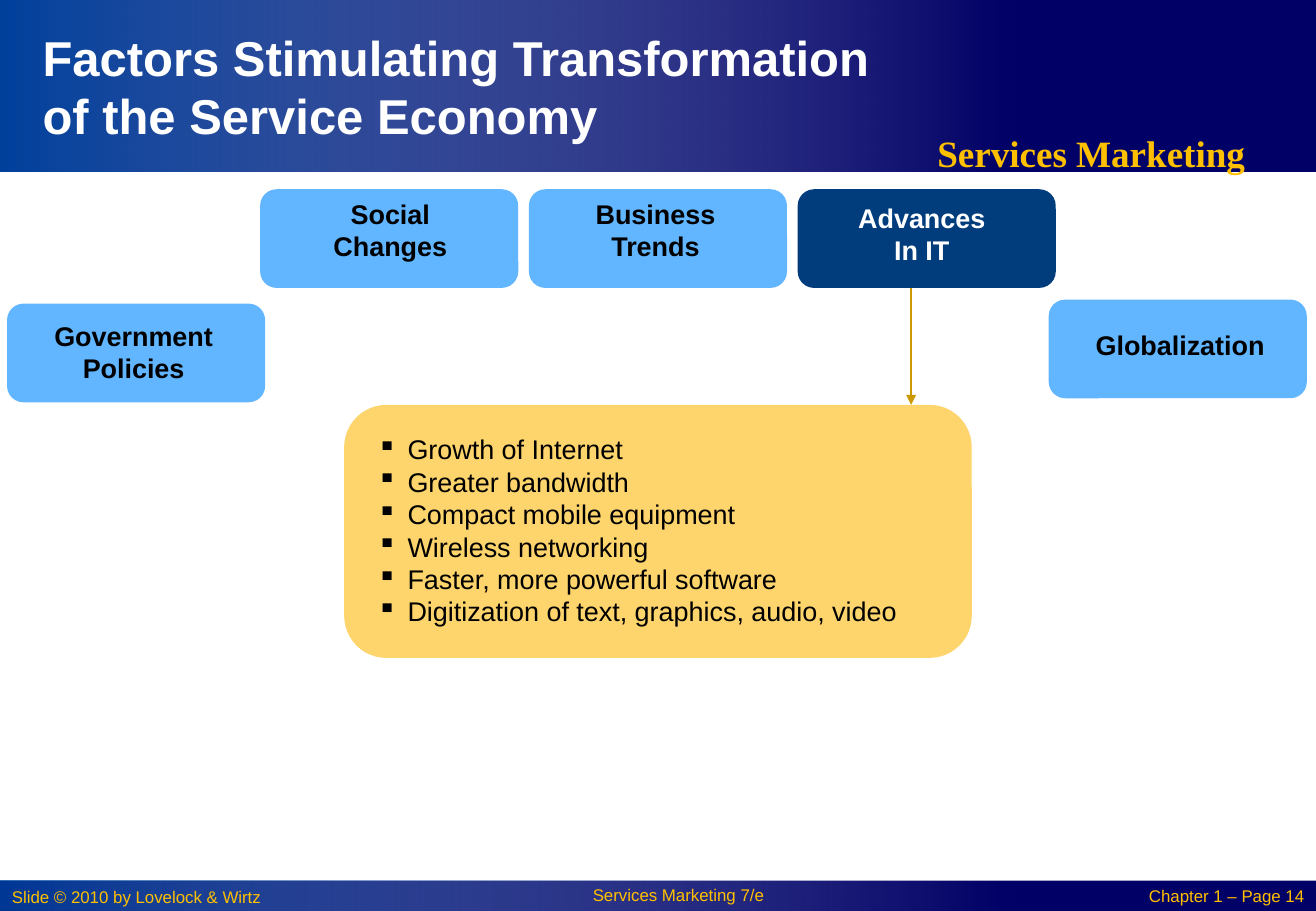
from lxml.etree import SubElement
from pptx import Presentation
from pptx.dml.color import RGBColor
from pptx.enum.shapes import MSO_CONNECTOR, MSO_SHAPE
from pptx.enum.text import MSO_ANCHOR, MSO_AUTO_SIZE, PP_ALIGN
from pptx.oxml.ns import qn
from pptx.util import Inches, Pt

NAVY = RGBColor(0x00, 0x00, 0x66)
BAND_BLUE = RGBColor(0x01, 0x52, 0xAB)
SKY = RGBColor(0x61, 0xB6, 0xFF)
DEEP_BLUE = RGBColor(0x01, 0x3C, 0x7D)
SAND = RGBColor(0xFE, 0xD4, 0x6C)
GOLD = RGBColor(0xFF, 0xC0, 0x00)
ARROW_GOLD = RGBColor(0xCC, 0x99, 0x00)
WHITE = RGBColor(0xFF, 0xFF, 0xFF)
BLACK = RGBColor(0x00, 0x00, 0x00)

# The slide is a grid of 130 columns by 90 rows.
COLUMNS, ROWS = 130, 90
WIDTH, HEIGHT = Inches(10.83), Inches(7.5)
HEADER_ROWS, FOOTER_ROWS = 17, 3
FOOTER_TOP = ROWS - FOOTER_ROWS
BOX_COLUMNS, BOX_ROWS = 25.5, 9.75
TOP_LEFT, TOP_ROW, TOP_STEP = 25.7, 18.7, 26.55

# Lines, column, row, fill, font colour, text shift and top inset in inches
FACTORS = [
    ("Social\nChanges", TOP_LEFT, TOP_ROW, SKY, BLACK, 0.01, 0.03),
    ("Business\nTrends", TOP_LEFT + TOP_STEP, TOP_ROW, SKY, BLACK, -0.02, 0.03),
    ("Advances\nIn IT", TOP_LEFT + 2 * TOP_STEP, TOP_ROW, DEEP_BLUE, WHITE, -0.04, 0.06),
    ("Government\nPolicies", 0.7, 30, SKY, BLACK, -0.02, 0.09),
    ("Globalization", 103.6, 29.6, SKY, BLACK, 0.02, 0.2),
]
ADVANCES = [
    "Growth of Internet",
    "Greater bandwidth",
    "Compact mobile equipment",
    "Wireless networking",
    "Faster, more powerful software",
    "Digitization of text, graphics, audio, video",
]


def grid(*cells):
    """Turn alternating column and row counts into lengths."""
    units = (WIDTH / COLUMNS, HEIGHT / ROWS)
    return [round(cell * units[index % 2]) for index, cell in enumerate(cells)]


def format_text(text_frame, size, color, bold=False, align=PP_ALIGN.LEFT,
                font_name="Arial", spacing=None):
    text_frame.word_wrap = True
    for paragraph in text_frame.paragraphs:
        paragraph.alignment = align
        if spacing:
            paragraph.line_spacing = spacing
        for run in paragraph.runs:
            run.font.name = font_name
            run.font.size = Pt(size)
            run.font.bold = bold
            run.font.color.rgb = color


def add_block(slide, kind, cells, color):
    shape = slide.shapes.add_shape(kind, *grid(*cells))
    shape.shadow.inherit = False
    shape.line.fill.background()
    shape.fill.solid()
    shape.fill.fore_color.rgb = color
    return shape


def add_band(slide, top, rows, opacity):
    """Add a navy bar with a blue glow that fades out to the right."""
    add_block(slide, MSO_SHAPE.RECTANGLE, (0, top, COLUMNS, rows), NAVY)
    glow = add_block(slide, MSO_SHAPE.RECTANGLE, (0, top, 100, rows), NAVY)
    glow.fill.gradient()
    glow.fill.gradient_angle = 0
    stops = zip(glow.fill.gradient_stops, (BAND_BLUE, WHITE), (0, 1), (opacity, 0))
    for stop, color, position, alpha in stops:
        stop.position = position
        stop.color.rgb = color
    for color_element, alpha in zip(glow.element.iter(qn("a:srgbClr")), (opacity, 0)):
        SubElement(color_element, qn("a:alpha"), val=str(alpha * 1000))


def add_label(slide, text, cells, size, **style):
    text_frame = slide.shapes.add_textbox(*grid(*cells)).text_frame
    text_frame.text = text
    format_text(text_frame, size, GOLD, **style)


def add_factor(slide, text, column, row, fill, color, shift, top_inset):
    cells = (column, row, BOX_COLUMNS, BOX_ROWS)
    text_frame = add_block(slide, MSO_SHAPE.ROUNDED_RECTANGLE, cells, fill).text_frame
    text_frame.text = text
    text_frame.vertical_anchor = MSO_ANCHOR.TOP
    text_frame.margin_left = Inches(0.1 + shift)
    text_frame.margin_right = Inches(0.1 - shift)
    text_frame.margin_top = Inches(top_inset)
    format_text(text_frame, 16, color, bold=True, align=PP_ALIGN.CENTER)


def add_bullet_panel(slide, items, cells):
    text_frame = add_block(slide, MSO_SHAPE.ROUNDED_RECTANGLE, cells, SAND).text_frame
    text_frame.text = "\n".join(items)
    text_frame.vertical_anchor = MSO_ANCHOR.TOP
    text_frame.margin_left = Inches(0.17)
    text_frame.margin_right = 0
    text_frame.margin_top = Inches(0.13)
    for paragraph in text_frame.paragraphs:
        properties = paragraph._p.get_or_add_pPr()
        properties.set("marL", str(Inches(0.25)))
        properties.set("indent", str(Inches(-0.25)))
        SubElement(properties, qn("a:buChar"), char="▪")
    format_text(text_frame, 16, BLACK)


def add_arrow(slide, cells):
    arrow = slide.shapes.add_connector(MSO_CONNECTOR.STRAIGHT, *grid(*cells))
    arrow.line.color.rgb = ARROW_GOLD
    arrow.line.width = Pt(1.25)
    SubElement(arrow.line._get_or_add_ln(), qn("a:tailEnd"), type="triangle")
    SubElement(arrow.element.spPr, qn("a:effectLst"))


def place_title(slide, text, cells):
    title = slide.shapes.title
    title.left, title.top, title.width, title.height = grid(*cells)
    title.text_frame.text = text
    title.text_frame.auto_size = MSO_AUTO_SIZE.NONE
    title.text_frame.vertical_anchor = MSO_ANCHOR.MIDDLE
    format_text(title.text_frame, 29, WHITE, bold=True)
    slide.shapes.element.append(title.element)  # bring above the header band


def main():
    presentation = Presentation()
    presentation.slide_width, presentation.slide_height = WIDTH, HEIGHT
    slide = presentation.slides.add_slide(presentation.slide_layouts[5])

    add_band(slide, FOOTER_TOP, FOOTER_ROWS, 69)
    add_band(slide, 0, HEADER_ROWS, 80)
    place_title(slide, "Factors Stimulating Transformation of the Service Economy",
                (3, 3, 85, 11))
    add_label(slide, "Services Marketing", (84, 10.5, 47.6, 7.5), 22, bold=True,
              align=PP_ALIGN.CENTER, font_name="Times New Roman", spacing=1.4)
    add_label(slide, "Slide © 2010 by Lovelock & Wirtz", (0, FOOTER_TOP, 31, 3), 10)
    add_label(slide, "Services Marketing 7/e", (51, FOOTER_TOP, 32, 3), 10,
              align=PP_ALIGN.CENTER, spacing=0.9)
    add_label(slide, "Chapter 1 – Page 14", (109, FOOTER_TOP + 0.1, 21, 3), 10,
              align=PP_ALIGN.RIGHT, spacing=0.9)

    add_arrow(slide, (90, 28, 90, 40))
    for factor in FACTORS:
        add_factor(slide, *factor)
    add_bullet_panel(slide, ADVANCES, (34, 40, 62, 25))

    presentation.save("out.pptx")


if __name__ == "__main__":
    main()
